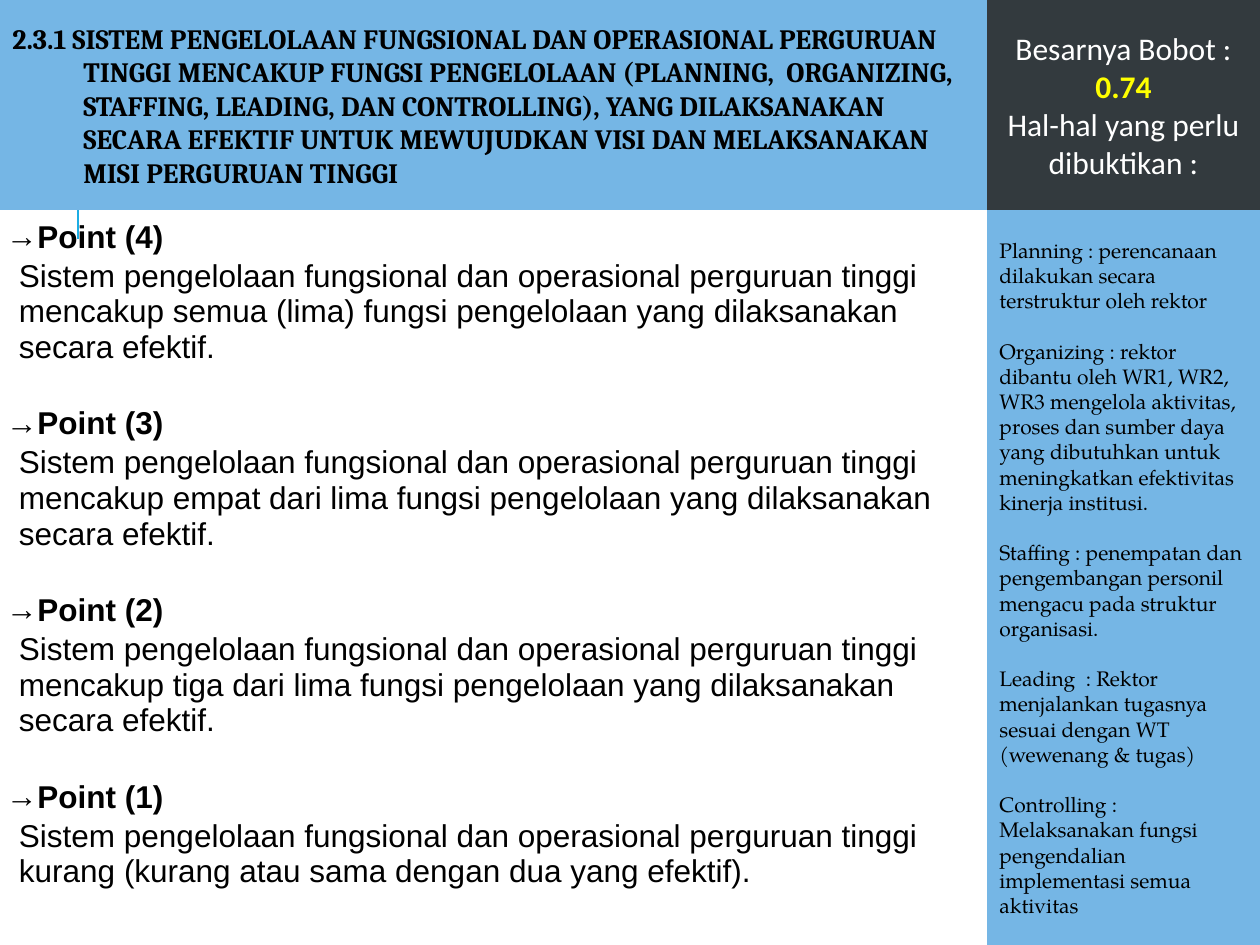
from lxml import etree
from pptx import Presentation
from pptx.dml.color import RGBColor
from pptx.enum.shapes import MSO_CONNECTOR, MSO_SHAPE
from pptx.enum.text import MSO_ANCHOR, PP_ALIGN
from pptx.oxml.ns import qn
from pptx.util import Emu, Pt

STRAIGHT = MSO_CONNECTOR.STRAIGHT
RECTANGLE = MSO_SHAPE.RECTANGLE
TOP, MIDDLE = MSO_ANCHOR.TOP, MSO_ANCHOR.MIDDLE
LEFT, CENTER = PP_ALIGN.LEFT, PP_ALIGN.CENTER

SLIDE_W, SLIDE_H = 1260, 945
MAIN_W, HEADER_H = 987, 210
SIDE_W = SLIDE_W - MAIN_W
POINTS_TOP = 214
POINTS_INSET = 6
BLUE, DARK, ACCENT = "75B6E5", "333A3E", "1CADE4"

TITLE = (
    "2.3.1 SISTEM PENGELOLAAN FUNGSIONAL DAN OPERASIONAL PERGURUAN TINGGI "
    "MENCAKUP FUNGSI PENGELOLAAN (PLANNING,  ORGANIZING,  STAFFING, LEADING, "
    "DAN CONTROLLING), YANG DILAKSANAKAN SECARA EFEKTIF UNTUK MEWUJUDKAN VISI "
    "DAN MELAKSANAKAN MISI PERGURUAN TINGGI"
)
WEIGHT_LABEL, WEIGHT = "Besarnya Bobot : ", "0.74"
EVIDENCE_LABEL = "Hal-hal yang perlu dibuktikan :"
EVIDENCE = [
    "Planning : perencanaan dilakukan secara terstruktur oleh rektor",
    "Organizing : rektor dibantu oleh WR1, WR2, WR3 mengelola aktivitas, proses dan "
    "sumber daya yang dibutuhkan untuk meningkatkan efektivitas kinerja institusi.",
    "Staffing : penempatan dan pengembangan personil mengacu pada struktur organisasi.",
    "Leading  : Rektor menjalankan tugasnya sesuai dengan WT (wewenang & tugas)",
    "Controlling : Melaksanakan fungsi pengendalian implementasi semua aktivitas",
]
SUBJECT = "Sistem pengelolaan fungsional dan operasional perguruan tinggi "
POINTS = [
    (4, "mencakup semua (lima) fungsi pengelolaan yang dilaksanakan secara efektif."),
    (3, "mencakup empat dari lima fungsi pengelolaan yang dilaksanakan secara efektif."),
    (2, "mencakup tiga dari lima fungsi pengelolaan yang dilaksanakan secara efektif."),
    (1, "kurang (kurang atau sama dengan dua yang efektif)."),
]

TITLE_FONT = {"name": "Cambria", "size": Pt(16), "bold": True, "color": "000000"}
EVIDENCE_FONT = {"name": "TeX Gyre Pagella", "size": Pt(12), "color": "000000"}
POINT_FONT = {"name": "Arial", "size": Pt(18), "bold": False, "color": "000000"}
HEADING_FONT = {**POINT_FONT, "bold": True}
LABEL_FONT = {"name": "Calibri", "size": Pt(18), "bold": False, "color": "FFFFFF"}
WEIGHT_FONT = {**LABEL_FONT, "bold": True, "color": "FFFF00"}

POINT_SPACING = {"line_spacing": 0.94, "space_after": Pt(2)}
POINT_GAP, EVIDENCE_GAP = Pt(21.4), Pt(14.4)


def px(length):
    return Emu(round(length * 914400 / 126))


def rgb(value):
    return RGBColor.from_string(value)


def apply(target, values):
    for key, value in values.items():
        if key == "color":
            target.color.rgb = rgb(value)
        else:
            setattr(target, key, value)


def indent(paragraph, left, first, bullet=None):
    properties = paragraph._p.get_or_add_pPr()
    properties.set("marL", str(px(left)))
    properties.set("indent", str(px(first)))
    if bullet:
        etree.SubElement(properties, qn("a:buFont"), typeface="Arial")
        etree.SubElement(properties, qn("a:buChar"), char=bullet)


def add_paragraph(frame, runs, **values):
    first = frame.paragraphs[0]
    paragraph = frame.add_paragraph() if first.runs else first
    apply(paragraph, {"alignment": LEFT, **values})
    for text, font in runs:
        run = paragraph.add_run()
        run.text = text
        apply(run.font, font)
    return paragraph


def add_panel(shapes, left, top, width, height, color):
    panel = shapes.add_shape(RECTANGLE, px(left), px(top), px(width), px(height))
    panel.shadow.inherit = False
    panel.fill.solid()
    panel.fill.fore_color.rgb = rgb(color)
    panel.line.fill.background()
    apply(panel.text_frame, {"word_wrap": True, "vertical_anchor": MIDDLE})
    return panel.text_frame


def add_points(shapes):
    box = shapes.add_textbox(0, px(POINTS_TOP), px(MAIN_W), px(SLIDE_H - POINTS_TOP))
    frame = box.text_frame
    apply(frame, {"word_wrap": True, "vertical_anchor": TOP})
    for side in ("left", "top", "right", "bottom"):
        setattr(frame, f"margin_{side}", px(POINTS_INSET))
    for index, (score, criterion) in enumerate(POINTS):
        gap = POINT_GAP if index else Pt(0)
        heading = add_paragraph(frame, [(f"Point ({score})", HEADING_FONT)],
                                space_before=gap, **POINT_SPACING)
        indent(heading, 13, -13, "→")
        detail = add_paragraph(frame, [(SUBJECT + criterion, POINT_FONT)], **POINT_SPACING)
        indent(detail, 13, 0)


def main():
    deck = Presentation()
    deck.slide_width, deck.slide_height = px(SLIDE_W), px(SLIDE_H)
    shapes = deck.slides.add_slide(deck.slide_layouts[6]).shapes

    accent = shapes.add_connector(STRAIGHT, px(78), px(239), px(78), px(113))
    apply(accent.line, {"color": ACCENT, "width": Pt(1.5)})
    etree.SubElement(accent._element.spPr, qn("a:effectLst"))

    title = add_panel(shapes, 0, 0, MAIN_W, HEADER_H, BLUE)
    indent(add_paragraph(title, [(TITLE, TITLE_FONT)]), 71, -71)

    evidence = add_panel(shapes, MAIN_W, HEADER_H, SIDE_W, SLIDE_H - HEADER_H, BLUE)
    for index, item in enumerate(EVIDENCE):
        add_paragraph(evidence, [(item, EVIDENCE_FONT)],
                      space_before=EVIDENCE_GAP if index else Pt(0))

    add_points(shapes)

    weight = add_panel(shapes, MAIN_W, 0, SIDE_W, HEADER_H, DARK)
    add_paragraph(weight, [(WEIGHT_LABEL, LABEL_FONT), (WEIGHT, WEIGHT_FONT)],
                  alignment=CENTER)
    add_paragraph(weight, [(EVIDENCE_LABEL, LABEL_FONT)], alignment=CENTER)

    deck.save("out.pptx")


if __name__ == "__main__":
    main()
